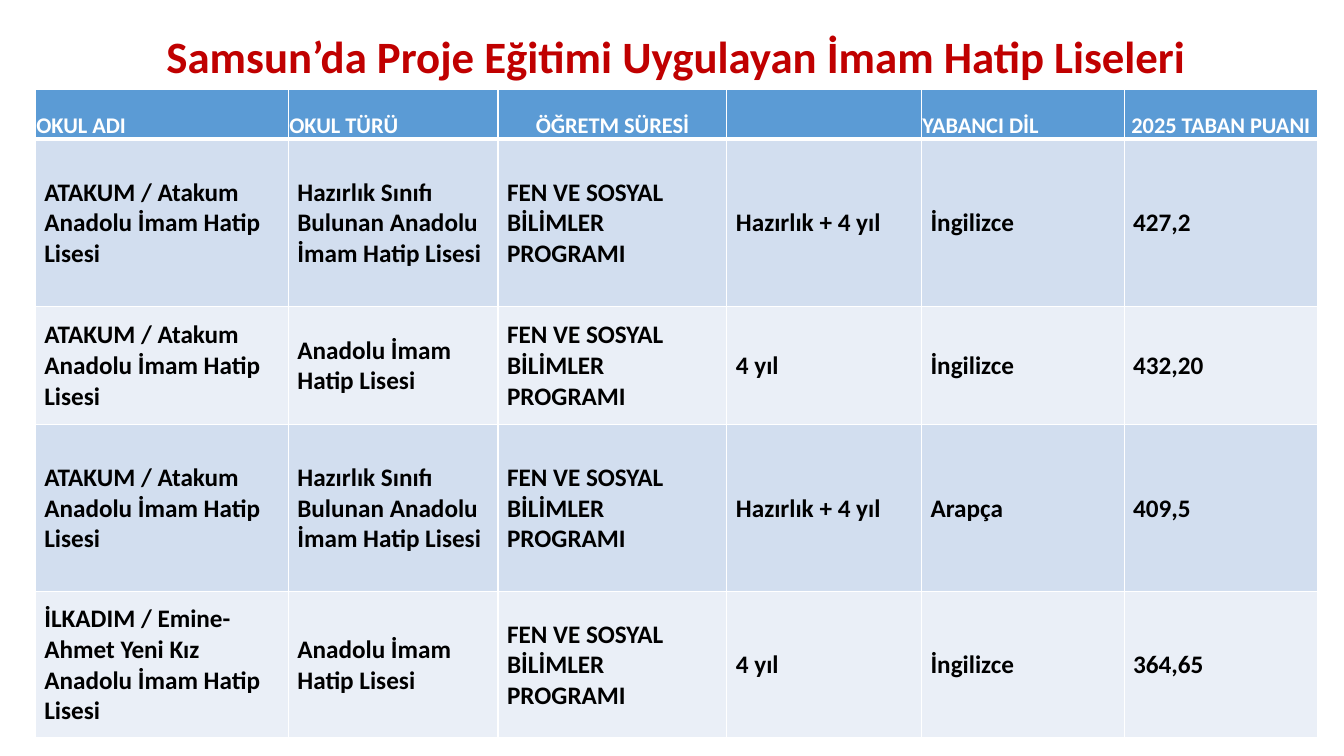
"""Build a slide with a table of the project Imam Hatip high schools in Samsun."""
import lxml.etree
import pptx
import pptx.dml.color
import pptx.enum.text
import pptx.oxml.ns
import pptx.util

Inches = pptx.util.Inches
Pt = pptx.util.Pt
Align = pptx.enum.text.PP_ALIGN
Anchor = pptx.enum.text.MSO_ANCHOR
Color = pptx.dml.color.RGBColor

RED = Color(0xC0, 0x00, 0x00)
WHITE = Color(0xFF, 0xFF, 0xFF)
BLACK = Color(0x00, 0x00, 0x00)
BLUE = Color(0x5B, 0x9B, 0xD5)
BANDS = (Color(0xD2, 0xDE, 0xEF), Color(0xEA, 0xEF, 0xF7))

COLUMN_WIDTHS = (2.51, 2.08, 2.27, 1.93, 2.01, 1.92)
ROW_HEIGHTS = (0.49, 1.66, 1.17, 1.66, 1.45)
CENTERED_HEADINGS = (2, 5)

HEADINGS = ("OKUL ADI", "OKUL TÜRÜ", "ÖĞRETM SÜRESİ", "", "YABANCI DİL", "2025 TABAN PUANI")
ATAKUM = "ATAKUM / Atakum Anadolu İmam Hatip Lisesi"
ILKADIM = "İLKADIM / Emine-Ahmet Yeni Kız Anadolu İmam Hatip Lisesi"
PREPARATORY = ("Hazırlık Sınıfı Bulunan Anadolu İmam Hatip Lisesi",
               "FEN VE SOSYAL BİLİMLER PROGRAMI", "Hazırlık + 4 yıl")
REGULAR = ("Anadolu İmam Hatip Lisesi", "FEN VE SOSYAL BİLİMLER PROGRAMI", "4 yıl")
SCHOOLS = (
    (ATAKUM, *PREPARATORY, "İngilizce", "427,2"),
    (ATAKUM, *REGULAR, "İngilizce", "432,20"),
    (ATAKUM, *PREPARATORY, "Arapça", "409,5"),
    (ILKADIM, *REGULAR, "İngilizce", "364,65"),
)


class SlideBuilder:
    """Hold the text style and the current slide."""

    def __init__(self, deck, font_name):
        self.font_name = font_name
        self.page = deck.slides.add_slide(deck.slide_layouts[5])

    def set_text(self, frame, text, size, color, align):
        frame.text = text
        para = frame.paragraphs[0]
        para.alignment = align
        para.font.name = self.font_name
        para.font.size = Pt(size)
        para.font.bold = True
        para.font.color.rgb = color
        return para

    def title(self, text, left, top, width, height):
        box = self.page.shapes.title
        box.left, box.top = Inches(left), Inches(top)
        box.width, box.height = Inches(width), Inches(height)
        box.text_frame.word_wrap = True
        box.text_frame.vertical_anchor = Anchor.MIDDLE
        para = self.set_text(box.text_frame, text, 32, RED, Align.CENTER)
        para.line_spacing = 0.9

    def borders(self, cell, bottom_width):
        properties = cell._tc.get_or_add_tcPr()
        widths = {"a:lnL": 1, "a:lnR": 1, "a:lnT": 1, "a:lnB": bottom_width}
        for position, (side, width) in enumerate(widths.items()):
            line = lxml.etree.Element(pptx.oxml.ns.qn(side), w=str(Pt(width)))
            fill = lxml.etree.SubElement(line, pptx.oxml.ns.qn("a:solidFill"))
            lxml.etree.SubElement(fill, pptx.oxml.ns.qn("a:srgbClr"), val=str(WHITE))
            properties.insert(position, line)

    def cell(self, cell, text, size, color, fill, align, anchor, margin, bottom_width):
        cell.fill.solid()
        cell.fill.fore_color.rgb = fill
        cell.vertical_anchor = anchor
        cell.margin_left = Inches(margin)
        cell.margin_top = cell.margin_right = Inches(0.01)
        cell.margin_bottom = 0
        self.set_text(cell.text_frame, text, size, color, align)
        self.borders(cell, bottom_width)

    def table(self, headings, rows, left, top):
        table = self.page.shapes.add_table(
            len(ROW_HEIGHTS), len(COLUMN_WIDTHS), Inches(left), Inches(top),
            Inches(sum(COLUMN_WIDTHS)), Inches(sum(ROW_HEIGHTS))).table
        for column, width in zip(table.columns, COLUMN_WIDTHS):
            column.width = Inches(width)
        for row, height in zip(table.rows, ROW_HEIGHTS):
            row.height = Inches(height)
        for column, text in enumerate(headings):
            align = Align.CENTER if column in CENTERED_HEADINGS else Align.LEFT
            self.cell(table.cell(0, column), text, 16, WHITE, BLUE,
                      align, Anchor.BOTTOM, 0.01, 3)
        for index, texts in enumerate(rows):
            for column, text in enumerate(texts):
                self.cell(table.cell(index + 1, column), text, 18, BLACK, BANDS[index % 2],
                          Align.LEFT, Anchor.MIDDLE, 0.09, 1)


def main():
    deck = pptx.Presentation()
    deck.slide_width, deck.slide_height = Inches(13.33), Inches(7.5)
    builder = SlideBuilder(deck, "Calibri")
    builder.title("Samsun’da Proje Eğitimi Uygulayan İmam Hatip Liseleri", 1.21, 0.01, 11, 1.16)
    builder.table(HEADINGS, SCHOOLS, 0.35, 0.89)
    deck.save("out.pptx")


if __name__ == "__main__":
    main()
